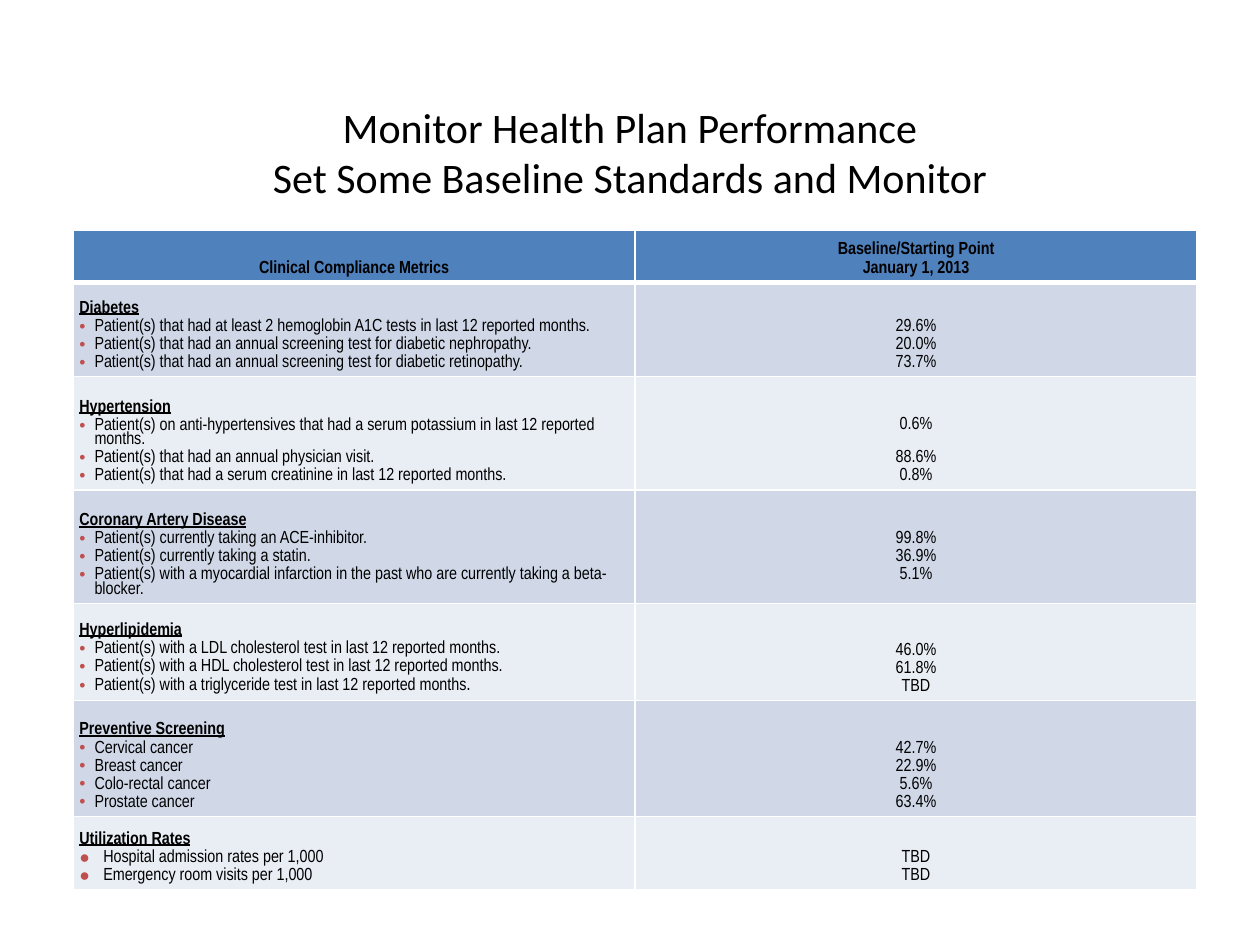
"""Build the health plan baseline slide with its table of clinical metrics."""
from lxml import etree
from pptx import Presentation
from pptx.dml.color import RGBColor
from pptx.enum.text import MSO_ANCHOR as Anchor, PP_ALIGN as Align
from pptx.oxml.ns import qn
from pptx.util import Inches, Pt

COLORS = {
    "text": "000000", "line": "FFFFFF", "header": "4F81BD",
    "dark": "D0D8E8", "light": "E9EDF4", "bullet": "C0504D",
}
TITLE = ["Monitor Health Plan Performance", "Set Some Baseline Standards and Monitor"]
HEADER = [["Clinical Compliance Metrics"], ["Baseline/Starting Point", "January 1, 2013"]]
SECTIONS = [
    ("Diabetes", 0.75, [
        ("Patient(s) that had at least 2 hemoglobin A1C tests in last 12 reported months.", "29.6%"),
        ("Patient(s) that had an annual screening test for diabetic nephropathy.", "20.0%"),
        ("Patient(s) that had an annual screening test for diabetic retinopathy.", "73.7%"),
    ]),
    ("Hypertension", 0.9, [
        ("Patient(s) on anti-hypertensives that had a serum potassium in last 12 reported months.", "0.6%"),
        ("Patient(s) that had an annual physician visit.", "88.6%"),
        ("Patient(s) that had a serum creatinine in last 12 reported months.", "0.8%"),
    ]),
    ("Coronary Artery Disease", 0.9, [
        ("Patient(s) currently taking an ACE-inhibitor.", "99.8%"),
        ("Patient(s) currently taking a statin.", "36.9%"),
        ("Patient(s) with a myocardial infarction in the past who are currently taking a beta-blocker.", "5.1%"),
    ]),
    ("Hyperlipidemia", 0.77, [
        ("Patient(s) with a LDL cholesterol test in last 12 reported months.", "46.0%"),
        ("Patient(s) with a HDL cholesterol test in last 12 reported months.", "61.8%"),
        ("Patient(s) with a triglyceride test in last 12 reported months", "TBD"),
    ]),
    ("Preventive Screening", 0.92, [
        ("Cervical cancer", "42.7%"),
        ("Breast cancer", "22.9%"),
        ("Colo-rectal cancer", "5.6%"),
        ("Prostate cancer", "63.4%"),
    ]),
    ("Utilization Rates", 0.58, [
        ("Hospital admission rates per 1,000", "TBD"),
        ("Emergency room visits per 1,000", "TBD"),
    ]),
]
HEADER_HEIGHT = 0.41
WRAPPED_LINE = 8.6


class SlideBuilder:
    """Hold the style and the current slide."""

    title_font = {"name": "Calibri", "size": Pt(24), "bold": False}
    body_font = {"name": "Arial Narrow", "size": Pt(10), "bold": False}
    spacing = {"line_spacing": 0.9, "space_before": Pt(2), "space_after": Pt(0)}
    margins = ("margin_left", "margin_top", "margin_right", "margin_bottom")

    def __init__(self, deck):
        self.page = deck.slides.add_slide(deck.slide_layouts[5])

    def apply(self, target, values):
        for name, value in values.items():
            setattr(target, name, value)

    def span(self, para, text, style, **changes):
        span = para.add_run()
        span.text = text
        self.apply(span.font, {**style, **changes})
        span.font.color.rgb = RGBColor.from_string(COLORS["text"])

    def title(self, lines, left, top, width, height):
        box = self.page.shapes.title
        self.apply(box, {"left": Inches(left), "top": Inches(top),
                         "width": Inches(width), "height": Inches(height)})
        box.text_frame.vertical_anchor = Anchor.MIDDLE
        para = box.text_frame.paragraphs[0]
        para.alignment = Align.CENTER
        for number, line in enumerate(lines):
            if number:
                para.add_line_break()
            self.span(para, line, self.title_font)

    def table(self, heights, widths, left, top):
        frame = self.page.shapes.add_table(
            len(heights), len(widths), Inches(left), Inches(top),
            Inches(sum(widths)), Inches(sum(heights)))
        table = frame.table
        self.apply(table, {"first_row": False, "horz_banding": False})
        for row, height in zip(table.rows, heights):
            row.height = Inches(height)
        for column, width in zip(table.columns, widths):
            column.width = Inches(width)
        return table

    def cell(self, cell, color, top=1, bottom=1):
        self.apply(cell, {name: Inches(0.05) for name in self.margins})
        cell.vertical_anchor = Anchor.BOTTOM
        cell.fill.solid()
        cell.fill.fore_color.rgb = RGBColor.from_string(COLORS[color])
        properties = cell._tc.get_or_add_tcPr()
        edges = {"a:lnL": 1, "a:lnR": 1, "a:lnT": top, "a:lnB": bottom}
        for place, (tag, width) in enumerate(edges.items()):
            line = etree.Element(qn(tag), w=str(Pt(width)))
            fill = etree.SubElement(line, qn("a:solidFill"))
            etree.SubElement(fill, qn("a:srgbClr"), val=COLORS["line"])
            properties.insert(place, line)

    def line(self, cell, text, align=Align.LEFT, **changes):
        frame = cell.text_frame
        first = frame.paragraphs[0]
        para = frame.add_paragraph() if first.runs else first
        self.apply(para, {**self.spacing, "alignment": align})
        self.span(para, text, self.body_font, **changes)
        return para

    def bullet(self, cell, text, mark, indent):
        para = self.line(cell, text)
        para.level = 1
        properties = para._p.get_or_add_pPr()
        properties.set("marL", str(Inches(indent)))
        properties.set("indent", str(-Inches(indent)))
        color = etree.SubElement(properties, qn("a:buClr"))
        etree.SubElement(color, qn("a:srgbClr"), val=COLORS["bullet"])
        etree.SubElement(properties, qn("a:buFont"), typeface="Arial")
        etree.SubElement(properties, qn("a:buChar"), char=mark)
        return para


def main():
    deck = Presentation()
    deck.slide_width, deck.slide_height = Inches(10), Inches(7.5)
    builder = SlideBuilder(deck)
    builder.title(TITLE, 0.25, 0.83, 9.5, 0.75)

    heights = [HEADER_HEIGHT] + [height for _, height, _ in SECTIONS]
    table = builder.table(heights, [4.46, 4.46], 0.58, 1.83)
    for column, lines in enumerate(HEADER):
        cell = table.cell(0, column)
        builder.cell(cell, "header", bottom=3)
        for text in lines:
            builder.line(cell, text, Align.CENTER, bold=True)

    for row, (heading, _, metrics) in enumerate(SECTIONS, 1):
        label_cell, value_cell = table.cell(row, 0), table.cell(row, 1)
        for cell in (label_cell, value_cell):
            builder.cell(cell, "dark" if row % 2 else "light", top=3 if row == 1 else 1)
        builder.line(label_cell, heading, bold=True, underline=True)
        mark, indent = ("●", 0.19) if heading == "Utilization Rates" else ("•", 0.12)
        for text, value in metrics:
            label = builder.bullet(label_cell, text, mark, indent)
            number = builder.line(value_cell, value, Align.CENTER)
            if "triglyceride" in text:
                builder.span(label, ".", builder.body_font, size=Pt(11))
            if "serum potassium" in text:
                number.space_after = Pt(WRAPPED_LINE)
            if "beta-blocker" in text:
                value_cell.margin_bottom = Inches(0.05) + Pt(WRAPPED_LINE)

    deck.save("out.pptx")


if __name__ == "__main__":
    main()
